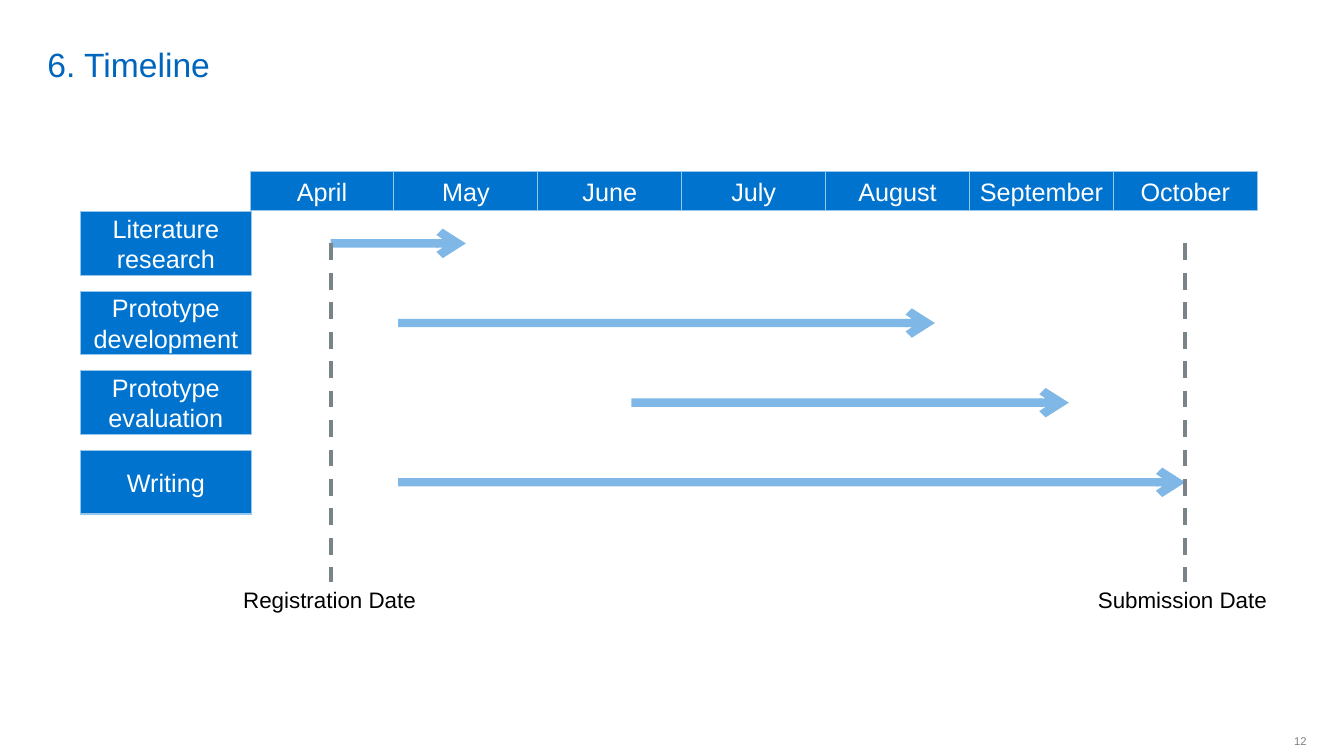
import pptx
import pptx.util
import pptx.dml.color
import pptx.enum.dml
import pptx.enum.shapes
import pptx.enum.text
import pptx.oxml.ns
import pptx.oxml.xmlchemy

Inches = pptx.util.Inches
Pt = pptx.util.Pt
RGBColor = pptx.dml.color.RGBColor
Align = pptx.enum.text.PP_ALIGN
Anchor = pptx.enum.text.MSO_ANCHOR
OxmlElement = pptx.oxml.xmlchemy.OxmlElement
qn = pptx.oxml.ns.qn

TITLE_BLUE = RGBColor(0x00, 0x65, 0xBD)
BLOCK_BLUE = RGBColor(0x00, 0x73, 0xCF)
EDGE_BLUE = RGBColor(0x98, 0xC6, 0xEA)
MARKER_GRAY = RGBColor(0x79, 0x84, 0x88)
NUMBER_GRAY = RGBColor(0x80, 0x80, 0x80)
WHITE = RGBColor(0xFF, 0xFF, 0xFF)
BLACK = RGBColor(0x00, 0x00, 0x00)

MONTHS = ["April", "May", "June", "July", "August", "September", "October"]
CALENDAR_LEFT, MONTH_WIDTH = 2.48, 9.99 / 7
CALENDAR_TOP, MONTH_HEIGHT = 1.7, 0.39
TASK_LEFT, TASK_WIDTH, TASK_HEIGHT = 0.8, 1.69, 0.63
TASK_TOP, TASK_STEP = 2.1, 0.79

REGISTRATION, SUBMISSION = 0.56, 6.5
MARKER_BOTTOM = 5.77
TASKS = [
    ("Literature research", REGISTRATION, 1.5),
    ("Prototype development", 1.03, 4.76),
    ("Prototype evaluation", 2.65, 5.69),
    ("Writing", 1.03, SUBMISSION),
]
MILESTONES = [
    ("Registration Date", REGISTRATION),
    ("Submission Date", SUBMISSION),
]


def month_x(months):
    return CALENDAR_LEFT + months * MONTH_WIDTH


def task_middle(row):
    return TASK_TOP + row * TASK_STEP + TASK_HEIGHT / 2


def write(frame, words, size, color, align=Align.LEFT):
    paragraph = frame.paragraphs[0]
    paragraph.alignment = align
    run = paragraph.add_run()
    run.text = words
    run.font.name = "Arial"
    run.font.size = Pt(size)
    run.font.color.rgb = color


def add_title(slide, words):
    title = slide.shapes.title
    title.left, title.top = Inches(0.37), Inches(0.05)
    title.width, title.height = Inches(11.58), Inches(0.79)
    frame = title.text_frame
    frame.auto_size = pptx.enum.text.MSO_AUTO_SIZE.NONE
    frame.vertical_anchor = Anchor.BOTTOM
    frame.margin_top = frame.margin_bottom = 0
    write(frame, words, 24, TITLE_BLUE)


def add_block(slide, words, left, top, width, height):
    block = slide.shapes.add_shape(
        pptx.enum.shapes.MSO_SHAPE.RECTANGLE,
        Inches(left), Inches(top), Inches(width), Inches(height))
    block.shadow.inherit = False
    block.fill.solid()
    block.fill.fore_color.rgb = BLOCK_BLUE
    block.line.color.rgb = EDGE_BLUE
    block.line.width = Pt(0.75)
    block.text_frame.word_wrap = True
    block.text_frame.vertical_anchor = Anchor.MIDDLE
    write(block.text_frame, words, 18, WHITE, Align.CENTER)


def add_line(slide, start, end, color, width):
    line = slide.shapes.add_connector(
        pptx.enum.shapes.MSO_CONNECTOR.STRAIGHT,
        Inches(start[0]), Inches(start[1]), Inches(end[0]), Inches(end[1]))
    line.line.color.rgb = color
    line.line.width = Pt(width)
    line.element.spPr.append(OxmlElement("a:effectLst"))
    return line


def add_task_arrow(slide, row, start, end):
    middle = task_middle(row)
    arrow = add_line(slide, (month_x(start), middle), (month_x(end), middle),
                     BLOCK_BLUE, 6)
    stroke = arrow.element.spPr.find(qn("a:ln"))
    alpha = OxmlElement("a:alpha")
    alpha.set("val", "50000")
    stroke.find(".//" + qn("a:srgbClr")).append(alpha)
    tip = OxmlElement("a:tailEnd")
    tip.set("type", "arrow")
    stroke.append(tip)


def add_label(slide, words, left, top, width, height):
    label = slide.shapes.add_textbox(
        Inches(left), Inches(top), Inches(width), Inches(height))
    label.text_frame.word_wrap = True
    write(label.text_frame, words, 16, BLACK)


def add_milestone(slide, words, month):
    x = month_x(month)
    marker = add_line(slide, (x, task_middle(0)), (x, MARKER_BOTTOM), MARKER_GRAY, 3)
    marker.line.dash_style = pptx.enum.dml.MSO_LINE.DASH
    label_width = 1.93
    add_label(slide, words, x - label_width / 2, MARKER_BOTTOM, label_width, 0.37)


def add_slide_number(slide, number):
    box = slide.shapes.add_textbox(
        Inches(12.6), Inches(7.19), Inches(0.36), Inches(0.32))
    frame = box.text_frame
    frame.word_wrap = False
    frame.vertical_anchor = Anchor.MIDDLE
    frame.margin_right = 0
    write(frame, number, 8, NUMBER_GRAY, Align.RIGHT)


def main():
    deck = pptx.Presentation()
    deck.slide_width, deck.slide_height = Inches(13.33), Inches(7.5)
    slide = deck.slides.add_slide(deck.slide_layouts[5])

    add_title(slide, "6. Timeline")
    add_slide_number(slide, "12")
    for column, month in enumerate(MONTHS):
        add_block(slide, month, month_x(column), CALENDAR_TOP,
                  MONTH_WIDTH, MONTH_HEIGHT)
    for row, (task, start, end) in enumerate(TASKS):
        add_block(slide, task, TASK_LEFT, TASK_TOP + row * TASK_STEP,
                  TASK_WIDTH, TASK_HEIGHT)
        add_task_arrow(slide, row, start, end)
    for words, month in MILESTONES:
        add_milestone(slide, words, month)

    deck.save("out.pptx")


if __name__ == "__main__":
    main()
